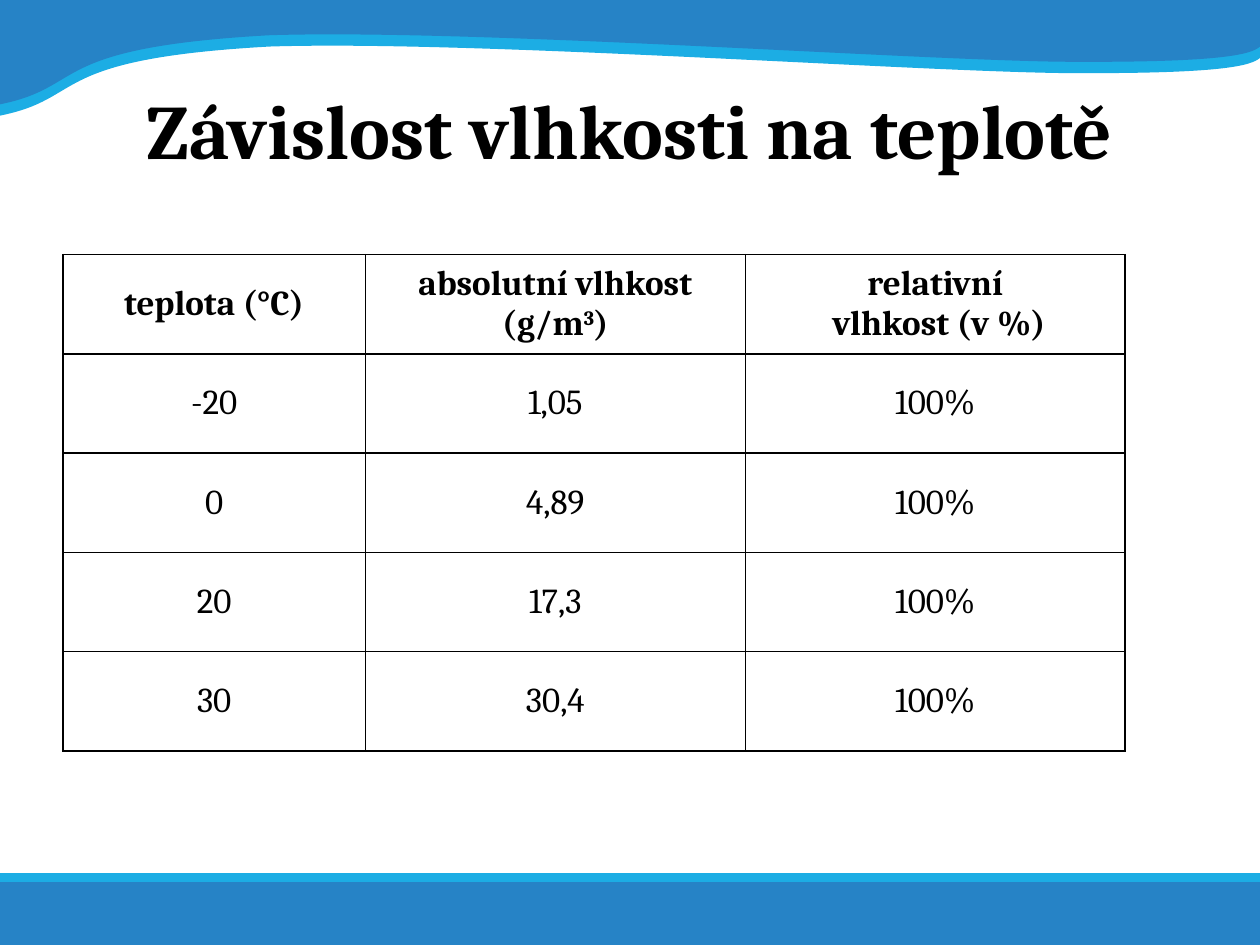
from dataclasses import dataclass

from lxml.etree import SubElement
from pptx import Presentation
from pptx.dml.color import RGBColor
from pptx.enum.shapes import MSO_SHAPE
from pptx.enum.text import MSO_ANCHOR, PP_ALIGN
from pptx.oxml.ns import qn
from pptx.util import Inches, Pt


@dataclass(frozen=True)
class Theme:
    """Colours, font and type sizes of the slide."""

    text: RGBColor = RGBColor(0x00, 0x00, 0x00)
    paper: RGBColor = RGBColor(0xFF, 0xFF, 0xFF)
    blue: RGBColor = RGBColor(0x26, 0x83, 0xC6)
    sky: RGBColor = RGBColor(0x1C, 0xAD, 0xE4)
    font: str = "Cambria"
    title_size: Pt = Pt(44)
    table_size: Pt = Pt(20)
    border: Pt = Pt(1)


THEME = Theme()
SLIDE_WIDTH, SLIDE_HEIGHT = 10, 7.5
WAVE_START, WAVE_CORNER = (0, -0.01), (10, 0)
WAVE_CURVES = [
    [(10, 0.12), (10, 0.25), (10, 0.37)],
    [(9.93, 0.43), (9.72, 0.5), (8.41, 0.49)],
    [(7.1, 0.47), (3.73, 0.23), (2.14, 0.28)],
    [(0.34, 0.38), (0.7, 0.69), (-0.01, 0.83)],
]
TABLE_WIDTH, TABLE_HEIGHT = 8.43, 3.94
TEMPERATURE_WIDTH = 2.4
HUMIDITY_WIDTH = (TABLE_WIDTH - TEMPERATURE_WIDTH) / 2
COLUMN_WIDTHS = [TEMPERATURE_WIDTH, HUMIDITY_WIDTH, HUMIDITY_WIDTH]
HUMIDITY_ROWS = [
    ["teplota (°C)", "absolutní vlhkost (g/m^3^)", "relativní\n vlhkost (v %)"],
    ["-20", "1,05", "100%"],
    ["0", "4,89", "100%"],
    ["20", "17,3", "100%"],
    ["30", "30,4", "100%"],
]


def paint(shape, color):
    """Give a shape a plain fill without line or shadow."""
    shape.shadow.inherit = False
    shape.fill.solid()
    shape.fill.fore_color.rgb = color
    shape.line.fill.background()


def bend_segments(wave):
    """Turn the control points after the first edge into cubic curves."""
    segments = list(wave.element.iter(qn("a:lnTo")))[1:]
    for index in range(len(WAVE_CURVES)):
        first, *others = segments[3 * index:3 * index + 3]
        first.tag = qn("a:cubicBezTo")
        for segment in others:
            first.append(segment[0])
            segment.getparent().remove(segment)


def add_wave(slide, drop, color):
    """Draw the header wave, lowered by the given drop."""
    controls = [point for curve in WAVE_CURVES for point in curve]
    outline = [WAVE_START, WAVE_CORNER, *controls, WAVE_START]
    start, *rest = [(Inches(x), Inches(y + drop)) for x, y in outline]
    builder = slide.shapes.build_freeform(*start)
    builder.add_line_segments(rest, close=True)
    wave = builder.convert_to_shape()
    bend_segments(wave)
    paint(wave, color)


def add_band(slide, top, height, color):
    """Draw a footer band across the slide."""
    band = slide.shapes.add_shape(
        MSO_SHAPE.RECTANGLE, 0, Inches(top), Inches(SLIDE_WIDTH), Inches(height)
    )
    paint(band, color)


def format_runs(paragraph, size, bold):
    """Centre a paragraph and format its runs."""
    paragraph.alignment = PP_ALIGN.CENTER
    for run in paragraph.runs:
        run.font.name = THEME.font
        run.font.size = size
        run.font.bold = bold
        run.font.color.rgb = THEME.text


def set_title(slide, wording):
    """Place the title in front of the header wave."""
    title = slide.shapes.title
    title.left, title.top, title.width, title.height = map(Inches, (0.5, 0.3, 9, 1.45))
    title.text_frame.text = wording
    title.text_frame.vertical_anchor = MSO_ANCHOR.MIDDLE
    format_runs(title.text_frame.paragraphs[0], THEME.title_size, True)
    title.element.getparent().append(title.element)


def set_borders(cell):
    """Draw a solid line on all four sides of a cell."""
    properties = cell._tc.get_or_add_tcPr()
    for side in ("a:lnL", "a:lnR", "a:lnT", "a:lnB"):
        line = SubElement(properties, qn(side), w=str(THEME.border))
        fill = SubElement(line, qn("a:solidFill"))
        SubElement(fill, qn("a:srgbClr"), val=str(THEME.text))


def fill_cell(cell, wording, bold):
    """Write and format a cell; text between carets is superscript."""
    set_borders(cell)
    cell.fill.solid()
    cell.fill.fore_color.rgb = THEME.paper
    cell.vertical_anchor = MSO_ANCHOR.MIDDLE
    cell.margin_left = cell.margin_right = Inches(0.08)
    cell.margin_top = cell.margin_bottom = Inches(0.04)
    paragraph = cell.text_frame.paragraphs[0]
    base, *others = wording.split("^")
    paragraph.text = base
    for index, part in enumerate(others):
        run = paragraph.add_run()
        run.text = part
        if index % 2 == 0:
            run._r.get_or_add_rPr().set("baseline", "30000")
    format_runs(paragraph, THEME.table_size, bold)


def add_humidity_table(slide):
    """Add the table of humidity by temperature."""
    table = slide.shapes.add_table(
        len(HUMIDITY_ROWS), len(COLUMN_WIDTHS), Inches(0.5), Inches(2.02),
        Inches(TABLE_WIDTH), Inches(TABLE_HEIGHT),
    ).table
    for column, width in zip(table.columns, COLUMN_WIDTHS):
        column.width = Inches(width)
    for row_index, (row, wordings) in enumerate(zip(table.rows, HUMIDITY_ROWS)):
        for cell, wording in zip(row.cells, wordings):
            fill_cell(cell, wording, row_index == 0)


def main():
    """Build and save the slide."""
    presentation = Presentation()
    presentation.slide_width = Inches(SLIDE_WIDTH)
    presentation.slide_height = Inches(SLIDE_HEIGHT)
    slide = presentation.slides.add_slide(presentation.slide_layouts[5])
    add_wave(slide, 0.09, THEME.sky)
    add_wave(slide, 0, THEME.blue)
    add_band(slide, 7, 0.5, THEME.blue)
    add_band(slide, 6.93, 0.07, THEME.sky)
    set_title(slide, "Závislost vlhkosti na teplotě")
    add_humidity_table(slide)
    presentation.save("out.pptx")


if __name__ == "__main__":
    main()
